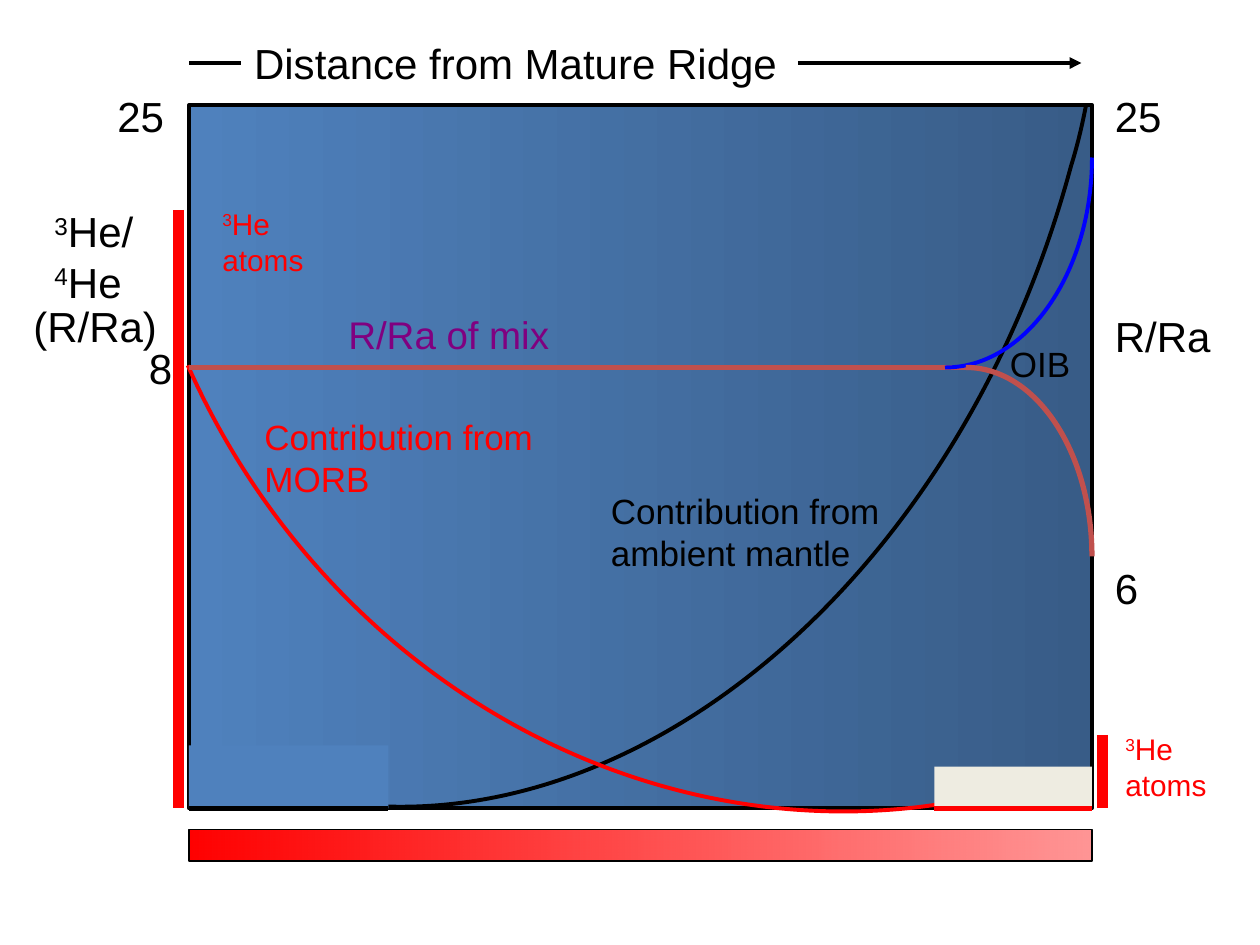
from lxml import etree
from pptx import Presentation
from pptx.dml.color import RGBColor
from pptx.enum.shapes import MSO_CONNECTOR, MSO_SHAPE
from pptx.enum.text import MSO_ANCHOR, MSO_AUTO_SIZE, PP_ALIGN
from pptx.oxml.ns import qn
from pptx.util import Pt

STRAIGHT = MSO_CONNECTOR.STRAIGHT
RECT = MSO_SHAPE.RECTANGLE
TOP = MSO_ANCHOR.TOP
LEFT = PP_ALIGN.LEFT
GROW = MSO_AUTO_SIZE.SHAPE_TO_FIT_TEXT

BLACK = RGBColor(0x00, 0x00, 0x00)
RED = RGBColor(0xFF, 0x00, 0x00)
ROSE = RGBColor(0xFF, 0x14, 0x14)
BRICK = RGBColor(0xC0, 0x50, 0x4D)
BLUE = RGBColor(0x00, 0x00, 0xFF)
STEEL = RGBColor(0x4F, 0x81, 0xBD)
CREAM = RGBColor(0xEE, 0xEC, 0xE1)
PURPLE = RGBColor(0x80, 0x00, 0x80)

X0, X1 = 108, 624
Y0, Y1 = 60, 462
MID = 210


def add_text(slide, text, x, y, w, h, size=24, color=BLACK, box=None):
    """Write text in a box; parts between carets are superscript."""
    box = box or slide.shapes.add_textbox(0, 0, 0, 0)
    box.left, box.top, box.width, box.height = Pt(x), Pt(y), Pt(w), Pt(h)
    frame = box.text_frame
    frame.word_wrap = True
    frame.auto_size = GROW
    frame.vertical_anchor = TOP
    para = frame.paragraphs[0]
    para.alignment = LEFT
    for i, part in enumerate(text.split("^")):
        if not part:
            continue
        run = para.add_run()
        run.text = part
        run.font.name = "Arial"
        run.font.size = Pt(size)
        run.font.color.rgb = color
        if i % 2:
            run.font._element.set("baseline", "30000")


def add_rect(slide, x, y, w, h, width=0):
    """Add a rectangle with a black outline, or none, and return it."""
    rect = slide.shapes.add_shape(RECT, Pt(x), Pt(y), Pt(w), Pt(h))
    rect.shadow.inherit = False
    if width:
        rect.line.color.rgb = BLACK
        rect.line.width = Pt(width)
    else:
        rect.line.fill.background()
    return rect


def add_block(slide, x, y, w, h, color):
    """Add a plain rectangle."""
    fill = add_rect(slide, x, y, w, h).fill
    fill.solid()
    fill.fore_color.rgb = color


def add_fade(slide, x, y, w, h, width, start, end, effect, val):
    """Add a rectangle that fades from left to right."""
    rect = add_rect(slide, x, y, w, h, width)
    rect.fill.gradient()
    rect.fill.gradient_angle = 0
    for stop, color in zip(rect.fill.gradient_stops, (start, end)):
        stop.color.rgb = color
    last = list(rect._element.spPr.iter(qn("a:srgbClr")))[1]
    etree.SubElement(last, qn(f"a:{effect}")).set("val", str(val))


def add_line(slide, x, y, x2, y2, color, width, arrow=False):
    """Add a straight line, with an arrowhead if asked."""
    line = slide.shapes.add_connector(STRAIGHT, Pt(x), Pt(y), Pt(x2), Pt(y2))
    line.line.color.rgb = color
    line.line.width = Pt(width)
    if arrow:
        head = etree.SubElement(line.line._get_or_add_ln(), qn("a:tailEnd"))
        head.set("type", "triangle")
    etree.SubElement(line._element.spPr, qn("a:effectLst"))


def add_curve(slide, points, color, width):
    """Add an open cubic curve through a start and triples of points."""
    start, *rest = [(Pt(x), Pt(y)) for x, y in points]
    pen = slide.shapes.build_freeform(*start)
    pen.add_line_segments(rest, close=False)
    curve = pen.convert_to_shape()
    curve.shadow.inherit = False
    curve.fill.background()
    curve.line.color.rgb = color
    curve.line.width = Pt(width)
    trace = next(curve._element.spPr.iter(qn("a:path")))
    legs = trace.findall(qn("a:lnTo"))
    for i in range(0, len(legs), 3):
        bend = etree.SubElement(trace, qn("a:cubicBezTo"))
        for leg in legs[i:i + 3]:
            bend.append(leg[0])
            trace.remove(leg)


def add_plot(slide):
    """Draw the panel and the curves."""
    add_fade(slide, X0, Y0, X1 - X0, Y1 - Y0, 2.25, STEEL, STEEL,
             "shade", 46275)
    mantle = [(620.6, 60), (618.5, 71.3), (615.6, 83.5), (612, 95),
              (545.8, 341.3), (344.2, 501.1), (162, 452.2),
              (144.7, 447.1), (128.2, 440.6), (112.3, 432.7)]
    ridge = [(107.3, 208.8), (194.4, 404.6), (403.9, 506.9), (593.3, 446.4)]
    isle = [(540, MID), (586.1, MID), (X1, 156), (X1, 90)]
    mix = [(552, MID), (591.8, MID), (X1, 258), (X1, 318)]
    add_curve(slide, mantle, BLACK, 2.25)
    add_curve(slide, ridge, RED, 2.25)
    add_line(slide, X0, MID, 552, MID, BRICK, 3)
    add_curve(slide, isle, BLUE, 2.25)
    add_curve(slide, mix, BRICK, 3)


def add_base(slide):
    """Draw the end blocks, the atom bars and the fading strip."""
    add_block(slide, 534, 438, 90, 24, CREAM)
    add_block(slide, X0, 426, 114, 36, STEEL)
    add_line(slide, X0, Y1, 222, Y1, BLACK, 3)
    add_line(slide, 534, Y1, X1, Y1, RED, 3)
    add_fade(slide, X0, 474, X1 - X0, 18, 0.75, RED, ROSE, "alpha", 45000)
    add_line(slide, 102, 120, 102, Y1, RED, 6)
    add_line(slide, 630, 420, 630, Y1, RED, 6)


def add_labels(slide):
    """Write the axis values and the curve names."""
    for text, x, y, w, h in (
        ("^3^He/^4^He", 24, 114, 65, 65),
        ("(R/Ra)", 12, 168, 90, 36),
        ("8", 78, 192, 48, 36),
        ("25", 630, 48, 54, 36),
        ("25", 60, 48, 54, 36),
        ("6", 630, 318, 30, 36),
        ("R/Ra", 630, 174, 78, 36),
    ):
        add_text(slide, text, x, y, w, h)
    for text, x, y, w, h, size, color in (
        ("Contribution from MORB", 144, 234, 174, 55.5, 20, RED),
        ("Contribution from ambient mantle", 342, 276, 186, 55.5, 20, BLACK),
        ("R/Ra of mix", 192, 174, 282, 34, 22, PURPLE),
        ("OIB", 570, 192, 66, 31, 20, BLACK),
        ("^3^He atoms", 120, 114, 78, 48, 17, RED),
        ("^3^He atoms", 636, 414, 72, 48, 17, RED),
    ):
        add_text(slide, text, x, y, w, h, size=size, color=color)


def main():
    """Build the slide and save it."""
    deck = Presentation()
    deck.slide_width, deck.slide_height = Pt(720), Pt(540)
    slide = deck.slides.add_slide(deck.slide_layouts[5])
    add_text(slide, "Distance from Mature Ridge", 138, 18, 432, 36,
             box=slide.shapes.title)
    add_line(slide, X0, 36, 138, 36, BLACK, 2.25)
    add_line(slide, 456, 36, 618, 36, BLACK, 2.25, arrow=True)
    add_plot(slide)
    add_base(slide)
    add_labels(slide)
    deck.save("out.pptx")


if __name__ == "__main__":
    main()
